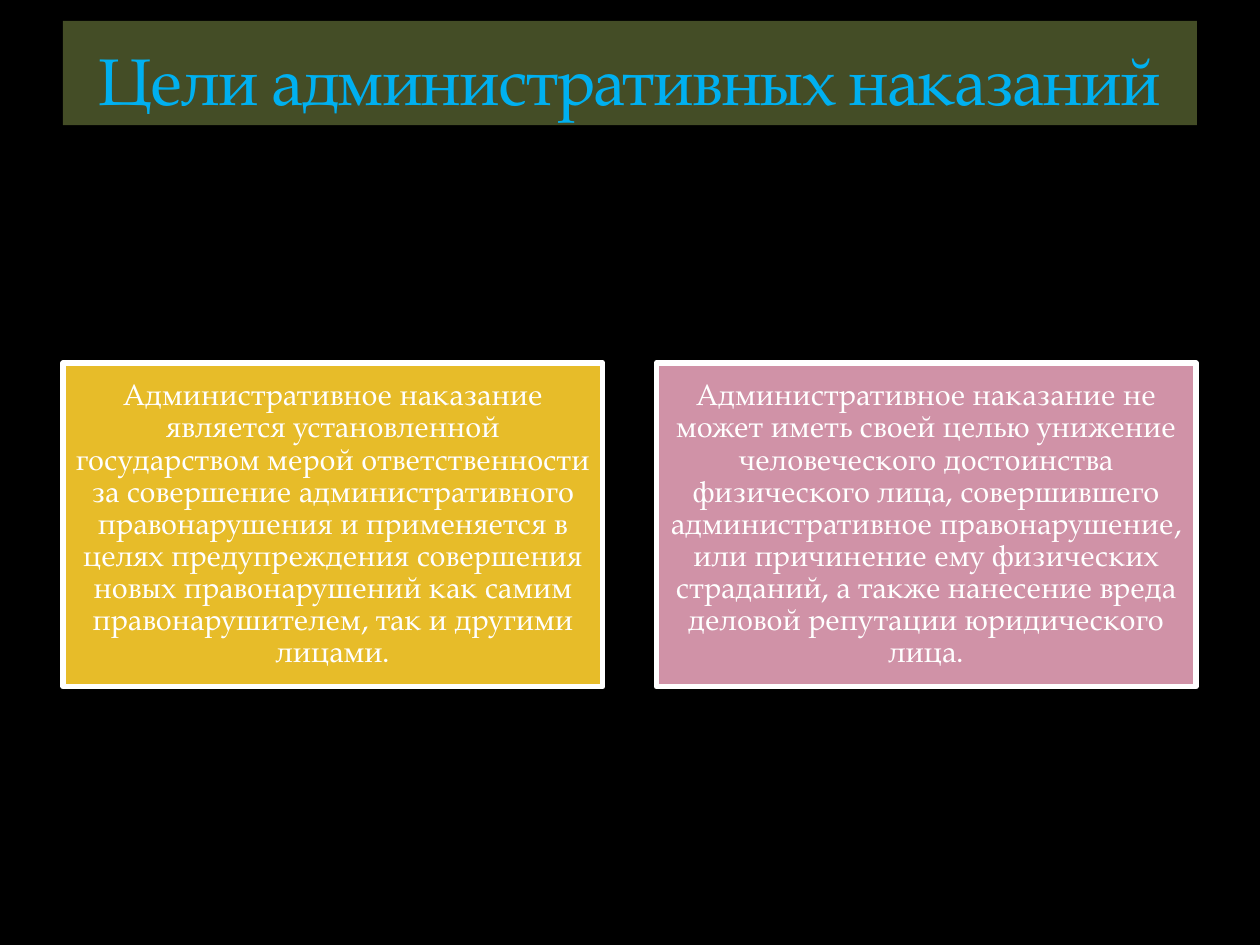
from pptx import Presentation
from pptx.dml.color import RGBColor
from pptx.enum.shapes import MSO_SHAPE
from pptx.enum.text import MSO_ANCHOR, PP_ALIGN
from pptx.util import Pt

RECT = MSO_SHAPE.RECTANGLE
CENTER = PP_ALIGN.CENTER
MIDDLE, BOTTOM = MSO_ANCHOR.MIDDLE, MSO_ANCHOR.BOTTOM
FONT = "TeX Gyre Pagella"

TITLE = "Цели административных наказаний"
CARDS = [
    ("E7BC29", "Административное наказание является установленной государством "
     "мерой ответственности за совершение административного правонарушения и "
     "применяется в целях предупреждения совершения новых правонарушений как "
     "самим правонарушителем, так и другими лицами."),
    ("D092A7", "Административное наказание не может иметь своей целью унижение "
     "человеческого достоинства физического лица, совершившего административное "
     "правонарушение, или причинение ему физических страданий, а также "
     "нанесение вреда деловой репутации юридического лица."),
]

LEFT, CARD_TOP = 36, 207.4
CARD_W, CARD_H, GAP = 308.5, 185, 30.5


def rgb(value):
    return RGBColor.from_string(value)


def add_box(s, x, y, w, h, fill, line=None):
    sp = s.shapes.add_shape(RECT, Pt(x), Pt(y), Pt(w), Pt(h))
    sp.shadow.inherit = False
    sp.fill.solid()
    sp.fill.fore_color.rgb = rgb(fill)
    if line:
        sp.line.color.rgb = rgb(line)
        sp.line.width = Pt(3)
    else:
        sp.line.fill.background()
    return sp


def set_text(sp, text, size, color, anchor=MIDDLE, inset=None, line_spacing=1, tracking=0):
    tf = sp.text_frame
    tf.word_wrap = True
    tf.vertical_anchor = anchor
    if inset is not None:
        tf.margin_left = tf.margin_right = Pt(inset)
        tf.margin_top = tf.margin_bottom = Pt(inset)
    p = tf.paragraphs[0]
    p.alignment = CENTER
    p.line_spacing = line_spacing
    r = p.add_run()
    r.text = text
    r.font.name = FONT
    r.font.size = Pt(size)
    r.font.color.rgb = rgb(color)
    if tracking:
        r.font._element.set("spc", str(tracking * 100))


prs = Presentation()
prs.slide_width, prs.slide_height = Pt(720), Pt(540)
s = prs.slides.add_slide(prs.slide_layouts[6])
s.background.fill.solid()
s.background.fill.fore_color.rgb = rgb("000000")

title = add_box(s, LEFT, 12, 648, 59.5, "444D26")
set_text(title, TITLE, 37.8, "00B0F0", anchor=BOTTOM, tracking=-1)

for i, (fill, text) in enumerate(CARDS):
    card = add_box(s, LEFT + i * (CARD_W + GAP), CARD_TOP, CARD_W, CARD_H, fill, line="FFFFFF")
    set_text(card, text, 17, "FFFFFF", inset=5, line_spacing=0.9)

prs.save("out.pptx")
